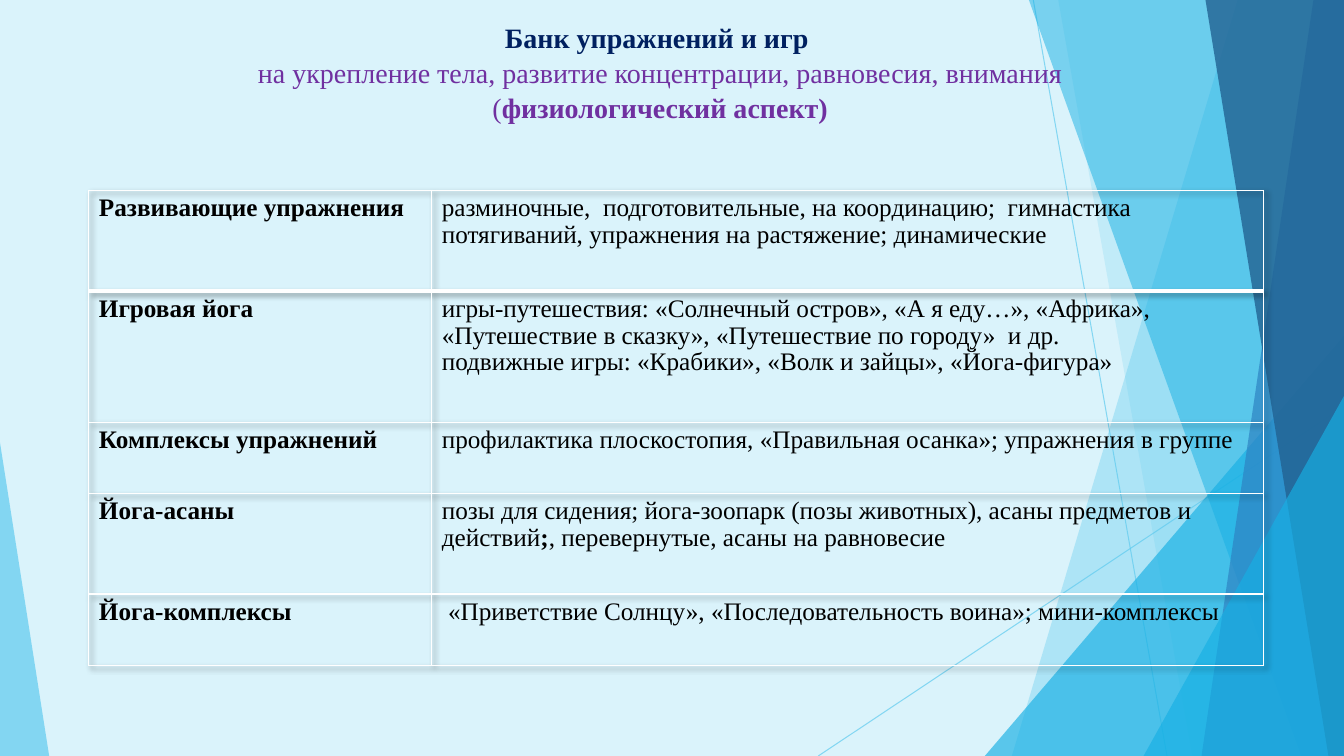
from lxml import etree
from pptx import Presentation
from pptx import util as u
from pptx.dml.color import RGBColor
from pptx.enum import shapes, text
from pptx.oxml import parse_xml
from pptx.oxml.ns import qn

NS = 'xmlns:a="http://schemas.openxmlformats.org/drawingml/2006/main"'
FONT = "Times New Roman"
PALE = RGBColor(0xDA, 0xF3, 0xFB)
SKY = RGBColor(0x5F, 0xCB, 0xEF)
AZURE = RGBColor(0x17, 0xB0, 0xE4)
BLUE = RGBColor(0x2E, 0x83, 0xC3)
STEEL = RGBColor(0x22, 0x62, 0x92)
NAVY = RGBColor(0x00, 0x20, 0x60)
PURPLE = RGBColor(0x70, 0x30, 0xA0)
BLACK = RGBColor(0, 0, 0)

W, H = u.Cm(33.87), u.Cm(19.05)

# Each paragraph is a list of (text, bold) runs
TITLE = [
    (NAVY, [("Банк упражнений и игр ", True)]),
    (PURPLE, [("на укрепление тела, развитие концентрации, равновесия, внимания", False)]),
    (PURPLE, [("(", False), ("физиологический аспект)", True)]),
]
# Row height in cm, heading, paragraphs
ROWS = [
    (2.54, "Развивающие упражнения",
     [[("разминочные,  подготовительные, на координацию;  гимнастика потягиваний, "
        "упражнения на растяжение; динамические", False)]]),
    (3.3, "Игровая йога",
     [[("игры-путешествия: «Солнечный остров», «А я еду…», «Африка», "
        "«Путешествие в сказку», «Путешествие по городу»  и др.", False)],
      [("подвижные игры: «Крабики», «Волк и зайцы», «Йога-фигура»", False)]]),
    (1.79, "Комплексы упражнений",
     [[("профилактика плоскостопия, «Правильная осанка»; упражнения в группе", False)]]),
    (2.54, "Йога-асаны",
     [[("позы для сидения; йога-зоопарк (позы животных), асаны предметов и действий", False),
       (";", True), (", перевернутые, асаны на равновесие", False)]]),
    (1.79, "Йога-комплексы",
     [[(" «Приветствие Солнцу», «Последовательность воина»; мини-комплексы", False)]]),
]


def set_alpha(fill_parent, percent):
    clr = next(fill_parent.iter(qn("a:srgbClr")))
    etree.SubElement(clr, qn("a:alpha")).set("val", str(percent * 1000))


def paint(sp, color, percent):
    sp.shadow.inherit = False
    sp.fill.solid()
    sp.fill.fore_color.rgb = color
    set_alpha(sp.element.spPr, percent)
    sp.line.fill.background()


def add_runs(p, runs, size, color):
    for words, bold in runs:
        r = p.add_run()
        r.text = words
        r.font.name, r.font.size, r.font.bold = FONT, u.Pt(size), bold
        r.font.color.rgb = color


def add_ray(s, x1, y1, x2, y2):
    ln = s.shapes.add_connector(shapes.MSO_CONNECTOR.STRAIGHT, x1, y1, x2, y2)
    ln.line.color.rgb = SKY
    ln.line.width = u.Pt(0.75)
    set_alpha(ln.element.spPr, 70)
    etree.SubElement(ln.element.spPr, qn("a:effectLst"))


def add_facet(s, top_x, bottom_x, color, percent):
    """Full-height panel with a slanted left edge, flush with the right side."""
    fb = s.shapes.build_freeform(u.Cm(top_x), 0)
    fb.add_line_segments([(W, 0), (W, H), (u.Cm(bottom_x), H)], close=True)
    paint(fb.convert_to_shape(), color, percent)


def add_corner(s, width, height, color, percent, right=True):
    """Right triangle standing in a bottom corner of the slide."""
    w, h = u.Cm(width), u.Cm(height)
    sp = s.shapes.add_shape(shapes.MSO_SHAPE.ISOSCELES_TRIANGLE,
                            W - w if right else 0, H - h, w, h)
    sp.adjustments[0] = 1 if right else 0
    paint(sp, color, percent)


def add_backdrop(s):
    s.background.fill.solid()
    s.background.fill.fore_color.rgb = PALE
    add_ray(s, u.Cm(26.04), 0, u.Cm(29.41), H)
    add_ray(s, W, u.Cm(10.24), u.Cm(20.62), H)
    add_facet(s, 31.19, 25.5, SKY, 36)
    add_facet(s, 26.67, 30.05, SKY, 20)
    add_corner(s, 9.05, 10.59, AZURE, 66)
    add_facet(s, 25.93, 32.79, AZURE, 50)
    add_facet(s, 33.1, 30.28, BLUE, 70)
    add_facet(s, 30.38, 33.48, STEEL, 80)
    add_corner(s, 5.05, 9.07, AZURE, 66)
    add_corner(s, 1.24, 7.9, SKY, 70, right=False)


def add_title(s, x, y, w, h):
    sp = s.shapes.title
    sp.element.getparent().append(sp.element)  # in front of the backdrop
    sp.left, sp.top, sp.width, sp.height = x, y, w, h
    tf = sp.text_frame
    tf.word_wrap = True
    tf.auto_size = text.MSO_AUTO_SIZE.NONE
    tf.vertical_anchor = text.MSO_ANCHOR.TOP
    for i, (color, runs) in enumerate(TITLE):
        p = tf.paragraphs[0] if i == 0 else tf.add_paragraph()
        p.alignment = text.PP_ALIGN.CENTER
        p.line_spacing = 1.04
        p.space_before = u.Pt(0)
        add_runs(p, runs, 20, color)


def fill_cell(cell, paragraphs, bottom, top):
    cell.fill.background()
    tf = cell.text_frame
    for i, runs in enumerate(paragraphs):
        p = tf.paragraphs[0] if i == 0 else tf.add_paragraph()
        p.line_spacing = 0.95
        add_runs(p, runs, 18, BLACK)
    # White borders go ahead of the cell fill
    widths = {"lnL": 1, "lnR": 1, "lnT": top, "lnB": bottom}
    for i, (tag, pt) in enumerate(widths.items()):
        cell._tc.get_or_add_tcPr().insert(i, parse_xml(
            f'<a:{tag} {NS} w="{u.Pt(pt)}"><a:solidFill>'
            f'<a:srgbClr val="FFFFFF"/></a:solidFill></a:{tag}>'))


def add_exercises(s, x, y, col_widths):
    h = sum(u.Cm(row[0]) for row in ROWS)
    tbl = s.shapes.add_table(len(ROWS), 2, x, y, sum(col_widths), h).table
    tbl.first_row = tbl.horz_banding = False
    for col, w in zip(tbl.columns, col_widths):
        col.width = w
    for i, (height, heading, paragraphs) in enumerate(ROWS):
        tbl.rows[i].height = u.Cm(height)
        bottom, top = (3 if i == 0 else 1), (3 if i == 1 else 1)
        fill_cell(tbl.cell(i, 0), [[(heading, True)]], bottom, top)
        fill_cell(tbl.cell(i, 1), paragraphs, bottom, top)
    # Soft shadow of the grid
    tbl._tbl.tblPr.insert(0, parse_xml(
        f'<a:effectLst {NS}><a:outerShdw blurRad="50800" dist="38100" dir="2700000">'
        '<a:srgbClr val="000000"><a:alpha val="40000"/></a:srgbClr>'
        '</a:outerShdw></a:effectLst>'))


def main():
    prs = Presentation()
    prs.slide_width, prs.slide_height = W, H
    s = prs.slides.add_slide(prs.slide_layouts[5])
    add_backdrop(s)
    add_title(s, u.Cm(4.27), u.Cm(0.36), u.Cm(24.74), u.Cm(3.68))
    add_exercises(s, u.Cm(2.24), u.Cm(4.8), [u.Cm(8.64), u.Cm(20.96)])
    prs.save("out.pptx")


if __name__ == "__main__":
    main()
